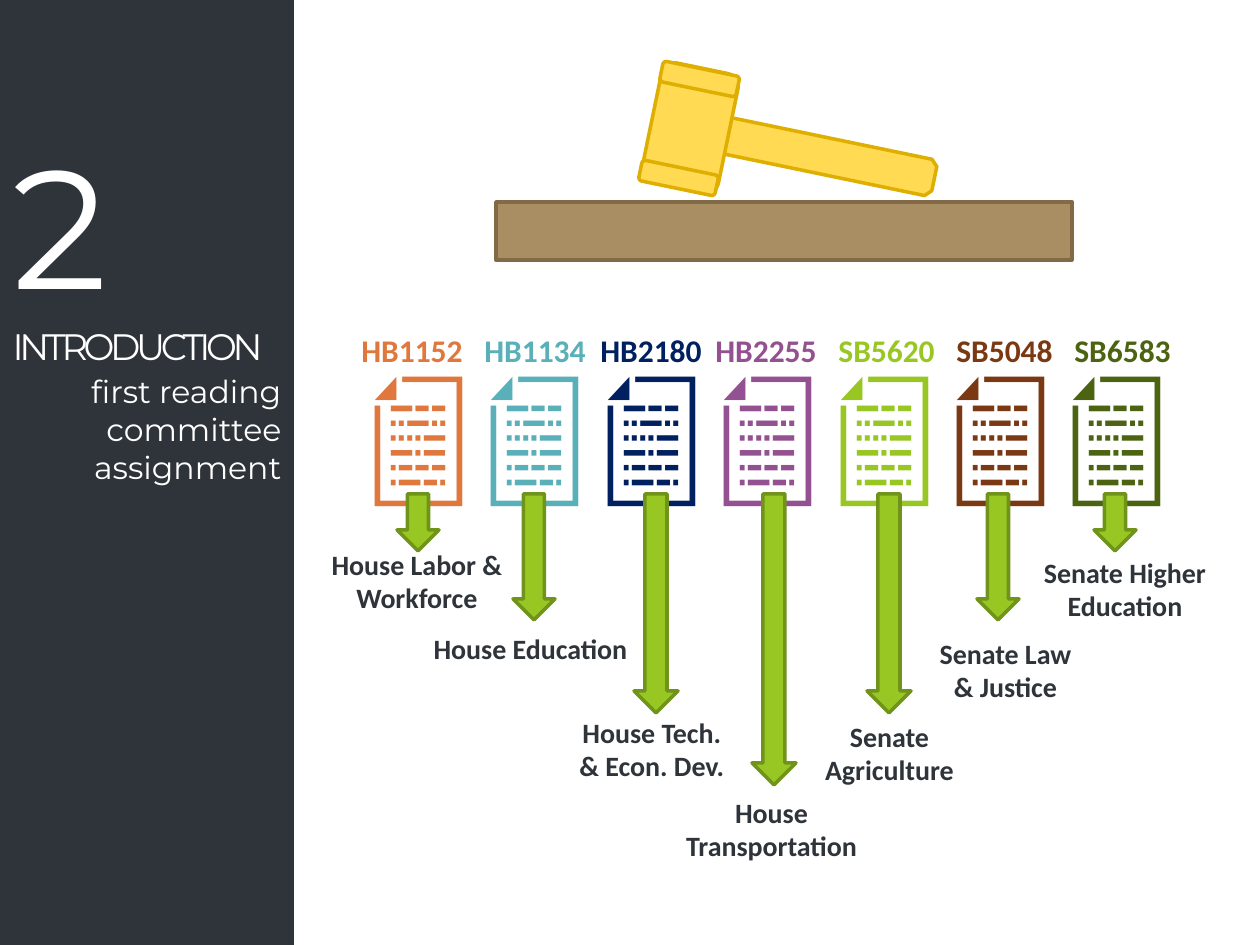
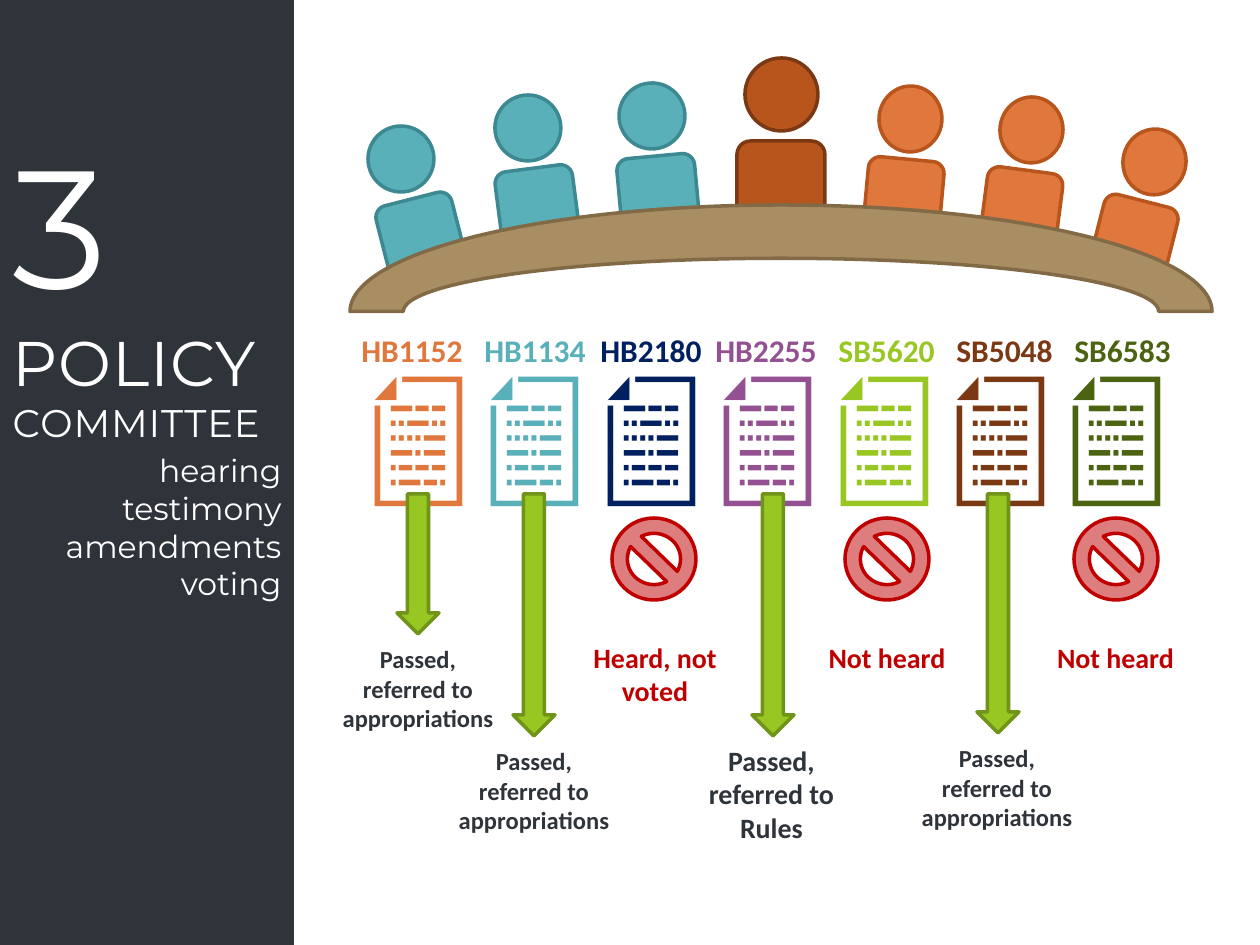
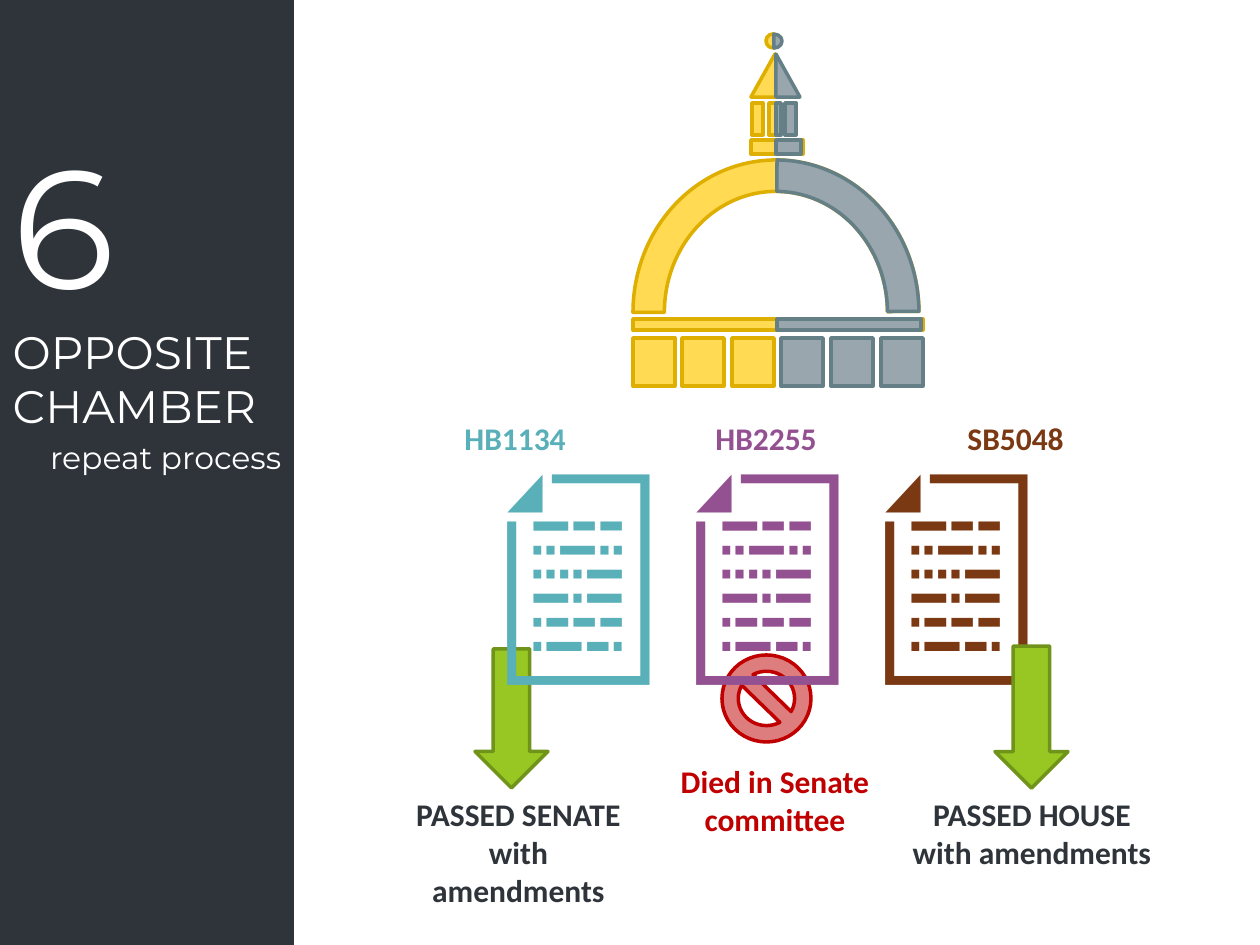
"""Build three slides that follow seven bills through a legislature."""
from pptx import Presentation
from pptx.dml.color import RGBColor
from pptx.enum.shapes import MSO_SHAPE
from pptx.enum.text import MSO_ANCHOR, MSO_AUTO_SIZE, PP_ALIGN
from pptx.oxml.ns import qn
from pptx.util import Emu, Pt
from lxml.etree import SubElement

PX_PER_INCH = 126
SLIDE_WIDTH, SLIDE_HEIGHT, BAND_WIDTH = 1260, 945, 294
WHITE = RGBColor(0xFF, 0xFF, 0xFF)
SLATE = RGBColor(0x2E, 0x34, 0x3A)
RED = RGBColor(0xC0, 0x00, 0x00)
ORANGE = RGBColor(0xE0, 0x77, 0x3C)
TEAL = RGBColor(0x59, 0xB0, 0xB9)
NAVY = RGBColor(0x00, 0x20, 0x60)
PURPLE = RGBColor(0x94, 0x51, 0x91)
LIME = RGBColor(0x98, 0xC7, 0x23)
BROWN = RGBColor(0x7B, 0x39, 0x13)
OLIVE = RGBColor(0x4C, 0x63, 0x12)
RUST = RGBColor(0xB8, 0x55, 0x1D)
GREEN_PAIR = (LIME, RGBColor(0x70, 0x93, 0x1A))
WOOD_PAIR = (RGBColor(0xA9, 0x8D, 0x63), RGBColor(0x82, 0x6A, 0x47))
GOLD_PAIR = (RGBColor(0xFF, 0xDA, 0x52), RGBColor(0xDE, 0xAE, 0x00))
GRAY_PAIR = (RGBColor(0x99, 0xA6, 0xAE), RGBColor(0x64, 0x80, 0x86))
TEAL_PAIR = (TEAL, RGBColor(0x3D, 0x89, 0x91))
ORANGE_PAIR = (ORANGE, RUST)
CHAIR_PAIR = (RUST, BROWN)
RED_PAIR = (RED, RED)

HEADING_FONT, NOTE_FONT, ICON_FONT = "Montserrat", "Calibri", "Arial"
NUMBER_SIZE, LIST_SIZE = 96, 18
HEADING_TOP, INSET, LINE_RATIO = 116, 6, 1.22
ARROW, SIGN = MSO_SHAPE.DOWN_ARROW, MSO_SHAPE.NO_SYMBOL

BILLS = {"HB1152": ORANGE, "HB1134": TEAL, "HB2180": NAVY, "HB2255": PURPLE,
         "SB5620": LIME, "SB5048": BROWN, "SB6583": OLIVE}
ALL_BILLS = {"bills": list(BILLS), "labels": (344, 325, 858, 50),
             "stops": (5, 128, 244, 359, 482, 600, 718),
             "icons": (BAND_WIDTH, 335, 966, 183), "icon_size": 80, "icon_bold": True,
             "icon_gap": "", "icon_spacing": 10, "icon_indent": 63,
             "icon_align": PP_ALIGN.LEFT}
LAST_BILLS = {"bills": ["HB1134", "HB2255", "SB5048"], "labels": (447, 413, 701, 50),
              "stops": (5, 256, 508),
              "icons": (302, 411, 932, 289), "icon_size": 130, "icon_bold": False,
              "icon_gap": "\t", "icon_spacing": 0, "icon_indent": 0,
              "icon_align": PP_ALIGN.CENTER}

GAVEL_TURN = 101.7
GAVEL = [
    (MSO_SHAPE.RECTANGLE, (496, 202, 576, 58), WOOD_PAIR, 0, ()),
    (MSO_SHAPE.SNIP_2_SAME_RECTANGLE, (811, 50, 37, 214), GOLD_PAIR, GAVEL_TURN, ()),
    (MSO_SHAPE.ROUNDED_RECTANGLE, (629, 89, 122, 78), GOLD_PAIR, GAVEL_TURN, ()),
    (MSO_SHAPE.ROUNDED_RECTANGLE, (689, 40, 21, 78), GOLD_PAIR, GAVEL_TURN, ()),
    (MSO_SHAPE.ROUNDED_RECTANGLE, (668, 139, 21, 78), GOLD_PAIR, GAVEL_TURN, ()),
]

MEMBERS = [
    ((737, 141, 88, 81), (745, 58, 73, 73), CHAIR_PAIR, 0),
    ((381, 198, 78, 72), (368, 126, 66, 66), TEAL_PAIR, 345.7),
    ((498, 168, 78, 72), (495, 95, 66, 66), TEAL_PAIR, 352.6),
    ((619, 156, 78, 72), (619, 83, 66, 66), TEAL_PAIR, 354.7),
    ((1097, 200, 76, 72), (1123, 129, 63, 66), ORANGE_PAIR, 14.3),
    ((984, 170, 76, 72), (1000, 97, 63, 66), ORANGE_PAIR, 7.4),
    ((866, 159, 76, 72), (879, 86, 63, 66), ORANGE_PAIR, 5.3),
]
COMMITTEE = [
    part for torso, head, colors, turn in MEMBERS for part in (
        (MSO_SHAPE.ROUND_2_SAME_RECTANGLE, torso, colors, turn, ()),
        (MSO_SHAPE.OVAL, head, colors, turn, ()))
] + [(MSO_SHAPE.BLOCK_ARC, (350, 205, 862, 213), WOOD_PAIR, 0, ())]

DOME_BOX = (633, 160, 286, 305)
DOME = [
    (MSO_SHAPE.RECTANGLE, (633, 319, 290, 11), GOLD_PAIR, 0, ()),
    (MSO_SHAPE.BLOCK_ARC, DOME_BOX, GOLD_PAIR, 0, (108, 215.73, 0.11)),
    (MSO_SHAPE.RECTANGLE, (752, 103, 11, 32), GOLD_PAIR, 0, ()),
    (MSO_SHAPE.RECTANGLE, (751, 140, 52, 14), GOLD_PAIR, 0, ()),
    (MSO_SHAPE.FLOWCHART_CONNECTOR, (766, 34, 14, 14), GOLD_PAIR, 0, ()),
    (MSO_SHAPE.RECTANGLE, (769, 103, 11, 32), GOLD_PAIR, 0, ()),
    (MSO_SHAPE.ISOSCELES_TRIANGLE, (751, 54, 48, 43), GOLD_PAIR, 0, ()),
    (MSO_SHAPE.RECTANGLE, (777, 319, 144, 11), GRAY_PAIR, 0, ()),
    (MSO_SHAPE.BLOCK_ARC, DOME_BOX, GRAY_PAIR, 0, (162.25, 215.73, 0.11)),
    (MSO_SHAPE.RECTANGLE, (776, 140, 25, 14), GRAY_PAIR, 0, ()),
    (MSO_SHAPE.RECTANGLE, (785, 103, 11, 32), GRAY_PAIR, 0, ()),
    (MSO_SHAPE.RECTANGLE, (776, 103, 5, 32), GRAY_PAIR, 0, ()),
    (MSO_SHAPE.CHORD, (766, 34, 16, 14), GRAY_PAIR, 180, (53.42, 162)),
    (MSO_SHAPE.ISOSCELES_TRIANGLE, (776, 54, 24, 43), GRAY_PAIR, 0, (0,)),
] + [
    (MSO_SHAPE.RECTANGLE, (633 + block * 248 // 5, 338, 42, 48),
     GOLD_PAIR if block < 3 else GRAY_PAIR, 0, ()) for block in range(6)
]

REFERRED = ["Passed, referred to appropriations"]
STAGES = [
    {"number": "2", "heading": [("INTRODUCTION", 21, -2.5, 1)],
     "steps": ["first reading", "committee assignment"],
     "art": GAVEL, "documents": ALL_BILLS, "behind": [],
     "front": [(ARROW, (left, 494, width, height)) for left, width, height in (
         (397, 42, 57), (1094, 42, 57), (977, 42, 126), (634, 44, 219),
         (867, 44, 219), (513, 42, 126), (752, 44, 291))],
     "notes": [(["House Labor & Workforce"], (310, 541, 214, 81), 16, SLATE),
               (["House Education"], (417, 625, 227, 47), 16, SLATE),
               (["House Tech. ", "& Econ. Dev. "], (513, 709, 284, 81), 16, SLATE),
               (["Senate Agriculture"], (800, 713, 179, 81), 16, SLATE),
               (["House Transportation"], (656, 789, 231, 81), 16, SLATE),
               (["Senate Law & Justice"], (916, 630, 179, 81), 16, SLATE),
               (["Senate Higher Education"], (990, 549, 270, 81), 16, SLATE)]},
    {"number": "3", "heading": [("POLICY", 36, 0.5, 1), ("COMMITTEE", 22, 0.5, 1)],
     "steps": ["hearing", "testimony", "amendments", "voting"],
     "art": COMMITTEE, "documents": ALL_BILLS, "behind": [],
     "front": [(ARROW, (left, 494, 42, height)) for left, height in (
         (397, 140), (977, 239), (513, 242), (752, 242))]
     + [(SIGN, (left, 518, 84, 82)) for left in (845, 612, 1074)],
     "notes": [(REFERRED, (324, 638, 188, 102), 14, SLATE),
               (["Heard, not voted"], (551, 634, 208, 81), 16, RED),
               (["Passed, referred to Rules"], (689, 737, 165, 115), 16, SLATE),
               (["Not heard"], (795, 634, 184, 47), 16, RED),
               (["Not heard"], (1016, 634, 199, 47), 16, RED),
               (REFERRED, (440, 740, 188, 102), 14, SLATE),
               (REFERRED, (903, 737, 188, 102), 14, SLATE)]},
    {"number": "6", "heading": [("OPPOSITE CHAMBER", 26, 0, 2)],
     "steps": ["repeat process"],
     "art": DOME, "documents": LAST_BILLS,
     "behind": [(ARROW, (475, 649, 73, 139)), (SIGN, (722, 655, 89, 87))],
     "front": [(ARROW, (995, 646, 73, 142))],
     "notes": [(["PASSED SENATE", "with amendments"], (387, 789, 263, 89), 18, SLATE),
               (["Died in Senate committee"], (668, 756, 214, 89), 18, RED),
               (["PASSED HOUSE with amendments"], (890, 789, 284, 89), 18, SLATE)]},
]


def px(length):
    return Emu(round(length * 914400 / PX_PER_INCH))


def set_values(target, values):
    for name, value in values.items():
        setattr(target, name, value)


def place(box, area):
    set_values(box, dict(zip(("left", "top", "width", "height"), map(px, area))))


def add_figure(shapes, kind, area, colors, turn=0, adjustments=()):
    figure = shapes.add_shape(kind, *map(px, area))
    figure.shadow.inherit = False
    figure.rotation = turn
    for index, value in enumerate(adjustments):
        figure.adjustments[index] = value
    figure.fill.solid()
    figure.fill.fore_color.rgb, figure.line.color.rgb = colors
    figure.line.width = Pt(2)
    return figure


def add_marks(page, marks):
    for kind, area in marks:
        mark = add_figure(page.shapes, kind, area, RED_PAIR if kind == SIGN else GREEN_PAIR)
        if kind == SIGN:
            fill_color = mark.element.spPr.find(qn("a:solidFill")).find(qn("a:srgbClr"))
            SubElement(fill_color, qn("a:alpha"), val="51000")


def add_span(para, text, font, size, color, bold=False, spacing=0):
    span = para.add_run()
    span.text = text
    set_values(span.font, {"name": font, "size": Pt(size), "bold": bold})
    span.font.color.rgb = color
    if spacing:
        span._r.get_or_add_rPr().set("spc", str(round(spacing * 100)))


def next_para(frame, index, alignment):
    para = frame.paragraphs[0] if index == 0 else frame.add_paragraph()
    set_values(para, {"alignment": alignment, "space_before": Pt(0)})
    return para


def add_text_box(page, area):
    box = page.shapes.add_textbox(*map(px, area))
    set_values(box.text_frame, {"word_wrap": True,
                                "auto_size": MSO_AUTO_SIZE.SHAPE_TO_FIT_TEXT})
    return box.text_frame


def add_sidebar(page, stage):
    band = add_figure(page.shapes, MSO_SHAPE.RECTANGLE,
                      (0, 0, BAND_WIDTH, SLIDE_HEIGHT), (SLATE, SLATE))
    band.line.fill.background()
    page.shapes.element.insert(2, band.element)

    title, body = page.placeholders
    lines = [(stage["number"], NUMBER_SIZE, 0, 1)] + stage["heading"]
    line_scale = LINE_RATIO * PX_PER_INCH / 72
    title_height = round(INSET + line_scale * sum(size * rows for _, size, _, rows in lines))
    list_height = round(line_scale * LIST_SIZE * (len(stage["steps"]) + 1))
    place(title, (0, HEADING_TOP, BAND_WIDTH, title_height))
    place(body, (0, HEADING_TOP + title_height, BAND_WIDTH, list_height))
    for holder, top_inset in ((title, INSET), (body, 0)):
        set_values(holder.text_frame, {
            "word_wrap": True, "auto_size": MSO_AUTO_SIZE.NONE,
            "vertical_anchor": MSO_ANCHOR.TOP,
            "margin_top": px(top_inset), "margin_bottom": 0})
    for index, (text, size, spacing, _) in enumerate(lines):
        para = next_para(title.text_frame, index, PP_ALIGN.LEFT)
        add_span(para, text, HEADING_FONT, size, WHITE, spacing=spacing)
    for index, text in enumerate(stage["steps"]):
        para = next_para(body.text_frame, index, PP_ALIGN.RIGHT)
        settings = para._p.get_or_add_pPr()
        settings.set("marL", "0")
        settings.set("indent", "0")
        SubElement(settings, qn("a:buNone"))
        add_span(para, text, HEADING_FONT, LIST_SIZE, WHITE)


def add_documents(page, row):
    icons = next_para(add_text_box(page, row["icons"]), 0, row["icon_align"])
    icons._p.get_or_add_pPr().set("marL", str(px(row["icon_indent"])))
    labels = next_para(add_text_box(page, row["labels"]), 0, PP_ALIGN.LEFT)
    tab_list = SubElement(labels._p.get_or_add_pPr(), qn("a:tabLst"))
    for bill, stop in zip(row["bills"], row["stops"]):
        gap = "" if bill == row["bills"][-1] else row["icon_gap"]
        add_span(icons, "📄" + gap, ICON_FONT, row["icon_size"], BILLS[bill],
                 row["icon_bold"], row["icon_spacing"])
        SubElement(tab_list, qn("a:tab"), pos=str(px(stop)), algn="l")
        add_span(labels, "\t" + bill, NOTE_FONT, 18, BILLS[bill], True)


def add_notes(page, notes):
    for lines, area, size, color in notes:
        frame = add_text_box(page, area)
        for index, text in enumerate(lines):
            para = next_para(frame, index, PP_ALIGN.CENTER)
            add_span(para, text, NOTE_FONT, size, color, True)


def main():
    deck = Presentation()
    set_values(deck, {"slide_width": px(SLIDE_WIDTH), "slide_height": px(SLIDE_HEIGHT)})
    for stage in STAGES:
        page = deck.slides.add_slide(deck.slide_layouts[1])
        add_sidebar(page, stage)
        art = page.shapes.add_group_shape().shapes
        for part in stage["art"]:
            add_figure(art, *part)
        add_marks(page, stage["behind"])
        add_documents(page, stage["documents"])
        add_marks(page, stage["front"])
        add_notes(page, stage["notes"])
    deck.save("out.pptx")


if __name__ == "__main__":
    main()
